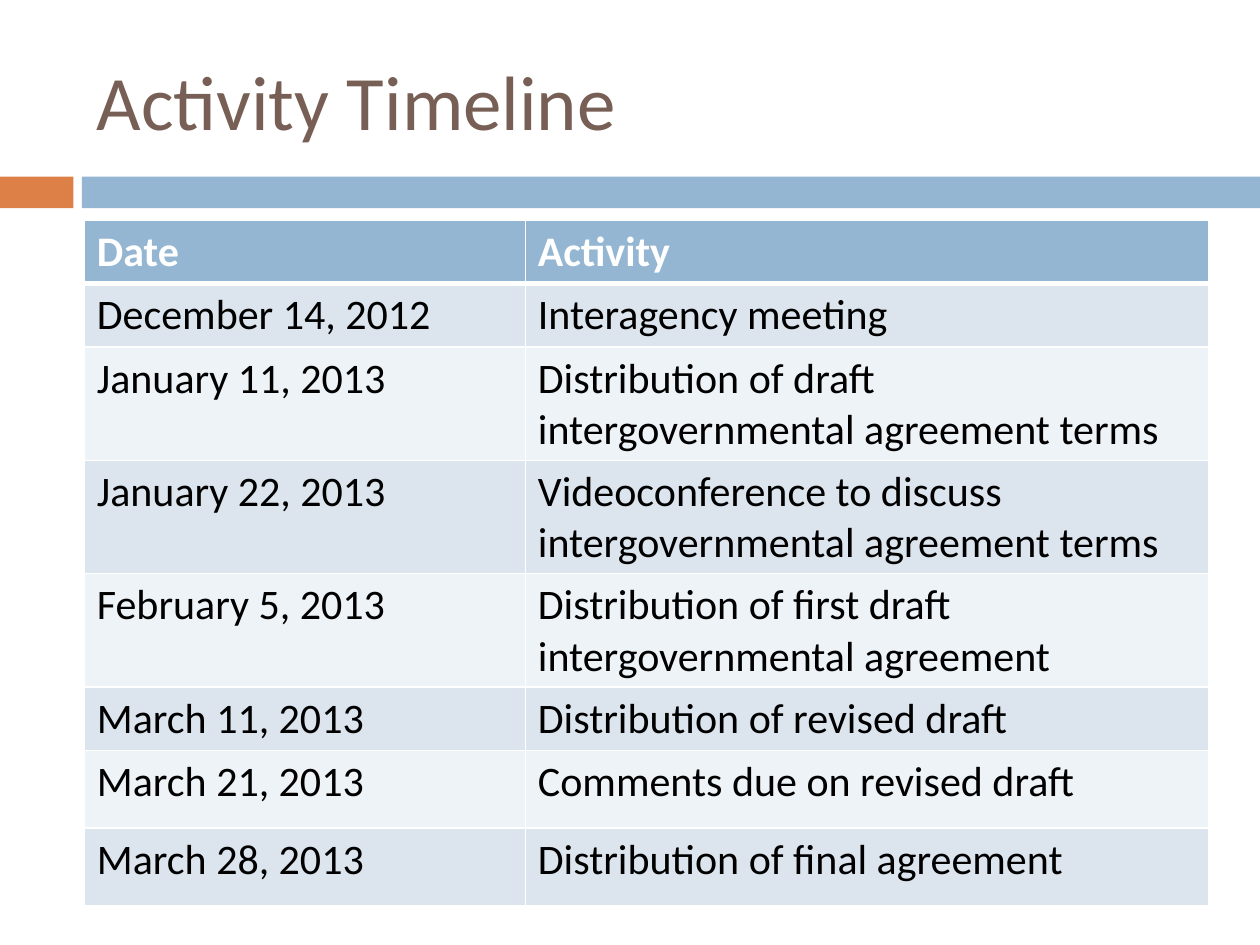
from lxml import etree
from pptx import Presentation
from pptx.dml.color import RGBColor
from pptx.enum.shapes import MSO_SHAPE
from pptx.enum.text import MSO_ANCHOR
from pptx.oxml.ns import qn
from pptx.util import Cm, Pt

RECT = MSO_SHAPE.RECTANGLE
MIDDLE = MSO_ANCHOR.MIDDLE
rgb = RGBColor.from_string

ORANGE, BLUE, BROWN = "DD8047", "94B6D2", "775F55"
WHITE, BLACK = "FFFFFF", "000000"
BANDS = ["EEF3F7", "DCE5EE"]

ROWS = [
    ("Date", "Activity", 1.22),
    ("December 14, 2012", "Interagency meeting", 1.22),
    ("January 11, 2013", "Distribution of draft intergovernmental agreement terms", 2.18),
    ("January 22, 2013", "Videoconference to discuss intergovernmental agreement terms", 2.18),
    ("February 5, 2013", "Distribution of first draft intergovernmental agreement", 2.18),
    ("March 11, 2013", "Distribution of revised draft", 1.22),
    ("March 21, 2013", "Comments due on revised draft", 1.57),
    ("March 28, 2013", "Distribution of final agreement", 1.57),
]


def write(tf, text, size=24, color=BLACK, bold=False):
    r = tf.paragraphs[0].add_run()
    r.text = text
    r.font.name = "Calibri"
    r.font.size = Pt(size)
    r.font.bold = bold
    r.font.color.rgb = rgb(color)


def set_borders(cell, **widths):
    """Draw white cell borders; widths in points are keyed by side: L, R, T, B."""
    tcPr = cell._tc.get_or_add_tcPr()
    for i, side in enumerate("LRTB"):
        ln = etree.Element(qn(f"a:ln{side}"), w=str(Pt(widths.get(side, 1))))
        fill = etree.SubElement(ln, qn("a:solidFill"))
        etree.SubElement(fill, qn("a:srgbClr"), val=WHITE)
        tcPr.insert(i, ln)


prs = Presentation()
prs.slide_width, prs.slide_height = Cm(25.4), Cm(19.05)
s = prs.slides.add_slide(prs.slide_layouts[6])

# Band under the title
for left, width, color in [(0, 1.48, ORANGE), (1.65, 23.75, BLUE)]:
    sp = s.shapes.add_shape(RECT, Cm(left), Cm(3.56), Cm(width), Cm(0.64))
    sp.shadow.inherit = False
    sp.fill.solid()
    sp.fill.fore_color.rgb = rgb(color)
    sp.line.fill.background()

# Title
tf = s.shapes.add_textbox(Cm(1.7), Cm(0.64), Cm(22.66), Cm(2.74)).text_frame
tf.word_wrap = True
tf.vertical_anchor = MIDDLE
write(tf, "Activity Timeline", size=44, color=BROWN)

# Timeline table
height = sum(row[-1] for row in ROWS)
table = s.shapes.add_table(len(ROWS), 2, Cm(1.7), Cm(4.45), Cm(22.66), Cm(height)).table
for col, width in zip(table.columns, (8.89, 13.77)):
    col.width = Cm(width)

for i, (date, activity, row_height) in enumerate(ROWS):
    table.rows[i].height = Cm(row_height)
    header = i == 0
    for j, text in enumerate((date, activity)):
        cell = table.cell(i, j)
        cell.fill.solid()
        cell.fill.fore_color.rgb = rgb(BLUE if header else BANDS[i % 2])
        set_borders(cell, T=3 if i == 1 else 1, B=3 if header else 1)
        write(cell.text_frame, text, color=WHITE if header else BLACK, bold=header)

prs.save("out.pptx")
